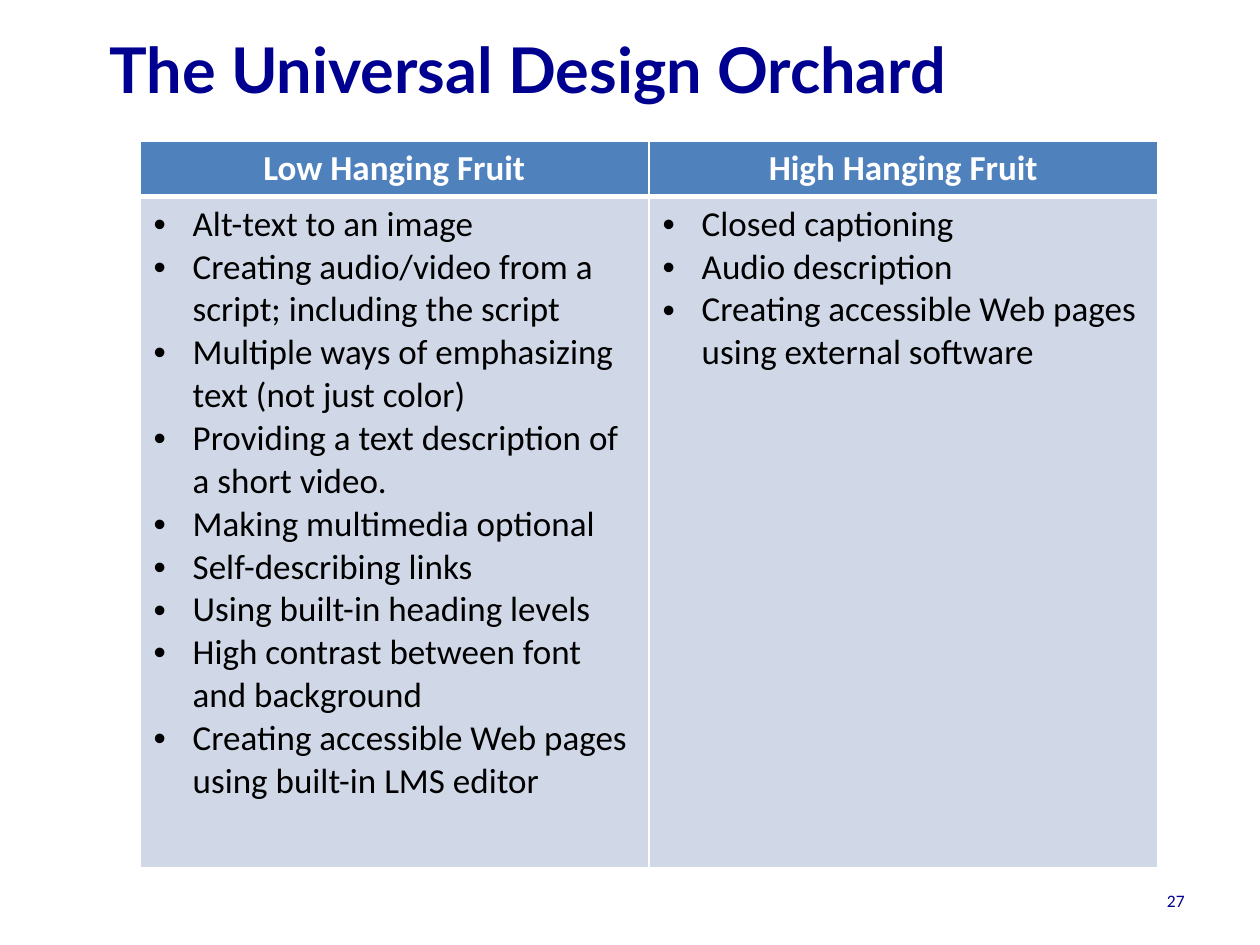
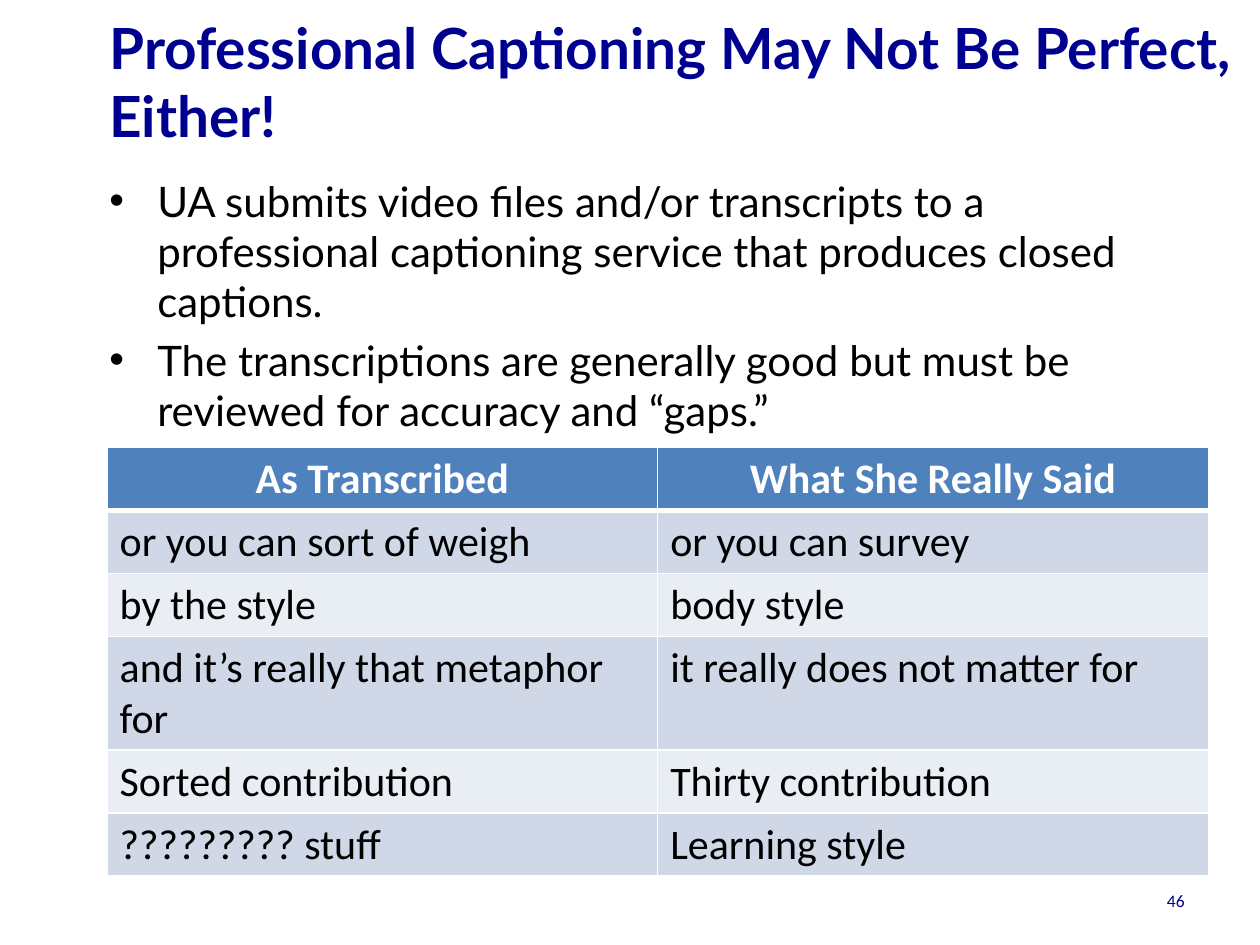
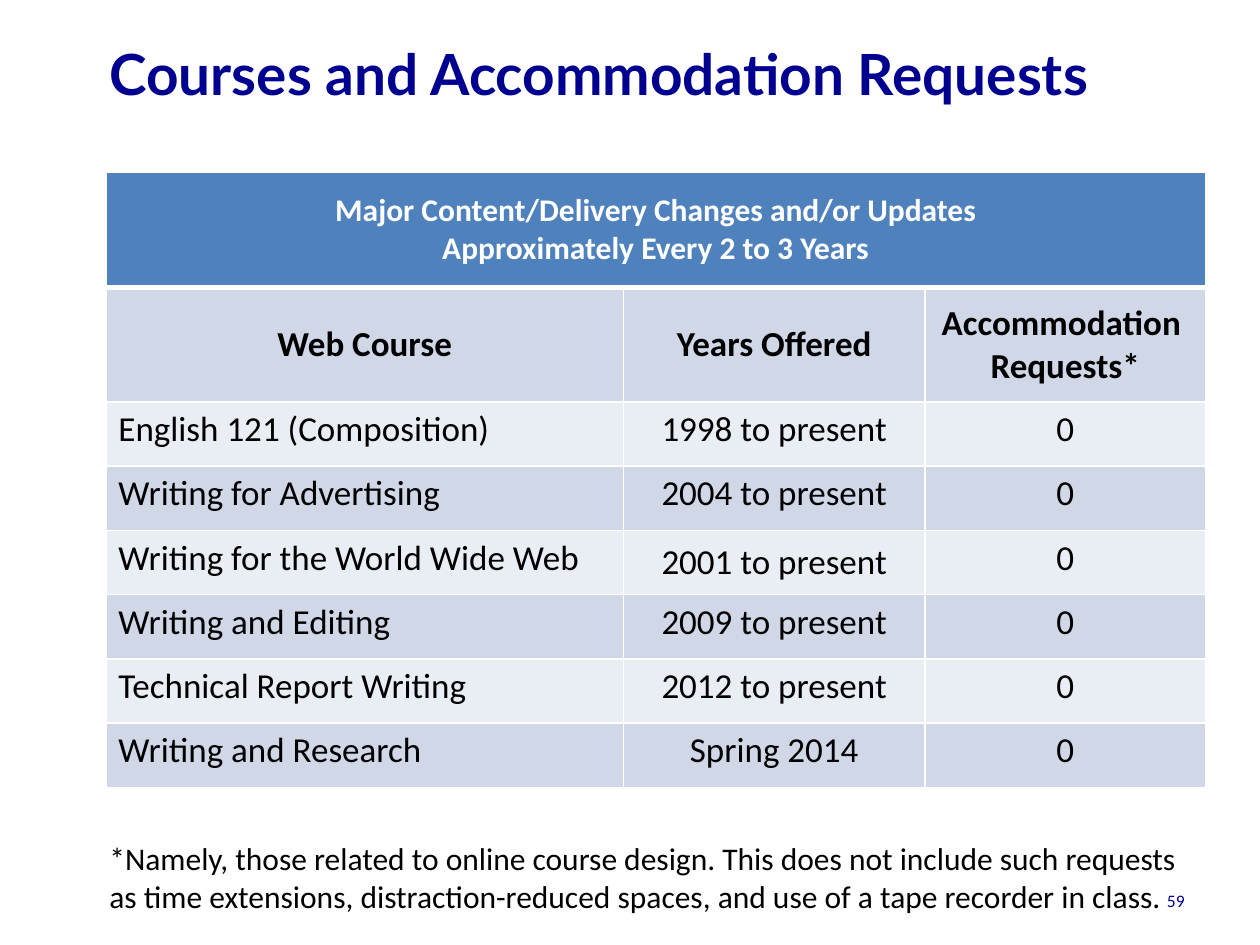
"""Build three slides on accessible course design, each with a title, a banded table and a page number."""
from dataclasses import dataclass
from typing import NamedTuple

from lxml import etree
from pptx import Presentation
from pptx import util as u
from pptx.dml.color import RGBColor
from pptx.enum import text
from pptx.oxml import ns

PX = 9144
NAVY = RGBColor(0x00, 0x00, 0x90)
BLACK = RGBColor(0x00, 0x00, 0x00)
WHITE = RGBColor(0xFF, 0xFF, 0xFF)
HEADER = RGBColor(0x4F, 0x81, 0xBD)
BANDS = (RGBColor(0xE9, 0xED, 0xF4), RGBColor(0xD0, 0xD8, 0xE8))
HEADING_FONT = "Lato"
TABLE_FONT = "Calibri"
LEFT, CENTER, RIGHT = text.PP_ALIGN.LEFT, text.PP_ALIGN.CENTER, text.PP_ALIGN.RIGHT
TOP, MIDDLE = text.MSO_ANCHOR.TOP, text.MSO_ANCHOR.MIDDLE


class Area(NamedTuple):
    left: int
    top: int
    width: int
    height: int


@dataclass(frozen=True)
class Grid:
    left: int
    top: int
    columns: tuple[int, ...]
    heights: tuple[int, ...]
    rows: tuple[tuple[str, ...], ...]
    size: int
    header_size: int
    bold_rows: int = 1
    middle_cells: tuple[tuple[int, int], ...] = ()
    body_aligns: tuple = (LEFT, LEFT)
    indent: int = 0
    side_inset: int = 10


@dataclass(frozen=True)
class Page:
    title: str
    title_top: int
    title_size: float
    number: int
    grid: Grid
    points: str = ""
    footnote: str = ""


FRUIT = Grid(
    111, 112, (404, 404), (44, 533),
    (
        ("Low Hanging Fruit", "High Hanging Fruit"),
        (
            "Alt-text to an image\n"
            "Creating audio/video from a script; including the script\n"
            "Multiple ways of emphasizing text (not just color)\n"
            "Providing a text description of a short video.\n"
            "Making multimedia optional\n"
            "Self-describing links\n"
            "Using built-in heading levels\n"
            "High contrast between font and background\n"
            "Creating accessible Web pages using built-in LMS editor",
            "Closed captioning\n"
            "Audio description\n"
            "Creating accessible Web pages using external software",
        ),
    ),
    size=20, header_size=20, indent=31, side_inset=11,
)

CAPTIONS = Grid(
    85, 355, (437, 437), (50, 50, 50, 90, 50, 50),
    (
        ("As Transcribed", "What She Really Said"),
        ("or you can sort of weigh", "or you can survey"),
        ("by the style", "body style"),
        ("and it’s really that metaphor for", "it really does not matter for"),
        ("Sorted contribution", "Thirty contribution"),
        ("????????? stuff", "Learning style"),
    ),
    size=24, header_size=24,
)

COURSES = Grid(
    84, 137, (411, 239, 223), (91, 91) + (51,) * 6,
    (
        ("Major Content/Delivery Changes and/or Updates\nApproximately Every 2 to 3 Years",),
        ("Web Course", "Years Offered", "Accommodation \vRequests*"),
        ("English 121 (Composition)", "1998 to present", "0"),
        ("Writing for Advertising", "2004 to present", "0"),
        ("Writing for the World Wide Web", "2001 to present", "0"),
        ("Writing and Editing", "2009 to present", "0"),
        ("Technical Report Writing", "2012 to present", "0"),
        ("Writing and Research", "Spring 2014", "0"),
    ),
    size=20, header_size=18, bold_rows=2,
    middle_cells=((0, 0), (1, 0), (1, 1), (1, 2), (4, 1)),
    body_aligns=(LEFT, CENTER, CENTER),
)

PAGES = (
    Page("The Universal Design Orchard", 8, 36, 27, FRUIT),
    Page(
        "Professional Captioning May Not Be Perfect, Either!", 18, 32.4, 46, CAPTIONS,
        points="UA submits video files and/or transcripts to a professional captioning service "
        "that produces closed captions.\n"
        "The transcriptions are generally good but must be reviewed for accuracy and “gaps.”",
    ),
    Page(
        "Courses and Accommodation Requests", 12, 32.4, 59, COURSES,
        footnote="*Namely, those related to online course design. This does not include such "
        "requests as time extensions, distraction-reduced spaces, and use of a tape recorder "
        "in class.",
    ),
)


def px(length: int) -> int:
    return u.Emu(length * PX)


def add_bullet(para, indent: int) -> None:
    props = para._p.get_or_add_pPr()
    props.set("marL", str(px(indent)))
    props.set("indent", str(-px(indent)))
    etree.SubElement(props, ns.qn("a:buFont")).set("typeface", "Arial")
    etree.SubElement(props, ns.qn("a:buChar")).set("char", "•")


def write(frame, content: str, *, size: float, font: str = TABLE_FONT,
          color: RGBColor = BLACK, bold: bool = False, align=LEFT,
          indent: int = 0, gap: float = 0) -> None:
    for index, line in enumerate(content.split("\n")):
        para = frame.add_paragraph() if index else frame.paragraphs[0]
        para.text = line
        para.alignment = align
        if index and gap:
            para.space_before = u.Pt(gap)
        if indent:
            add_bullet(para, indent)
        for span in para.runs:
            span.font.size = u.Pt(size)
            span.font.name = font
            span.font.bold = bold
            span.font.color.rgb = color


def add_text(slide, area: Area, content: str, *, anchor=TOP, **style) -> None:
    box = slide.shapes.add_textbox(*map(px, area))
    box.text_frame.word_wrap = True
    box.text_frame.vertical_anchor = anchor
    write(box.text_frame, content, **style)


def add_borders(cell, row: int) -> None:
    widths = {"L": 1, "R": 1, "T": 3 if row == 1 else 1, "B": 1 if row else 3}
    props = cell._tc.get_or_add_tcPr()
    for side, width in widths.items():
        line = etree.SubElement(props, ns.qn(f"a:ln{side}"), w=str(u.Pt(width)))
        fill = etree.SubElement(line, ns.qn("a:solidFill"))
        etree.SubElement(fill, ns.qn("a:srgbClr")).set("val", str(WHITE))


def add_grid(slide, grid: Grid) -> None:
    area = Area(grid.left, grid.top, sum(grid.columns), sum(grid.heights))
    table = slide.shapes.add_table(
        len(grid.rows), len(grid.columns), *map(px, area)).table
    for column, width in zip(table.columns, grid.columns):
        column.width = px(width)
    for row, height in zip(table.rows, grid.heights):
        row.height = px(height)
    for row, values in enumerate(grid.rows):
        for column in range(len(grid.columns)):
            cell = table.cell(row, column)
            add_borders(cell, row)
            cell.fill.solid()
            cell.fill.fore_color.rgb = BANDS[row % 2] if row else HEADER
        if len(values) == 1:
            table.cell(row, 0).merge(table.cell(row, len(grid.columns) - 1))
        for column, value in enumerate(values):
            cell = table.cell(row, column)
            cell.margin_left = cell.margin_right = px(grid.side_inset)
            cell.margin_top = cell.margin_bottom = px(5)
            cell.vertical_anchor = MIDDLE if (row, column) in grid.middle_cells else TOP
            heading = row < grid.bold_rows
            write(cell.text_frame, value,
                  size=grid.size if row else grid.header_size,
                  color=BLACK if row else WHITE, bold=heading,
                  align=CENTER if heading else grid.body_aligns[column],
                  indent=0 if heading else grid.indent)


def add_page(deck, page: Page) -> None:
    slide = deck.slides.add_slide(deck.slide_layouts[6])
    add_text(slide, Area(77, page.title_top, 923, 92), page.title, anchor=MIDDLE,
             size=page.title_size, font=HEADING_FONT, color=NAVY, bold=True)
    if page.points:
        add_text(slide, Area(77, 134, 873, 199), page.points, size=24,
                 font=HEADING_FONT, indent=38, gap=4.5)
    add_grid(slide, page.grid)
    add_text(slide, Area(717, 695, 233, 40), str(page.number), anchor=MIDDLE,
             size=10, color=NAVY, align=RIGHT)
    if page.footnote:
        add_text(slide, Area(77, 661, 873, 71), page.footnote, size=18)


def main() -> None:
    deck = Presentation()
    deck.slide_width, deck.slide_height = px(1000), px(750)
    for page in PAGES:
        add_page(deck, page)
    deck.save("out.pptx")


if __name__ == "__main__":
    main()
